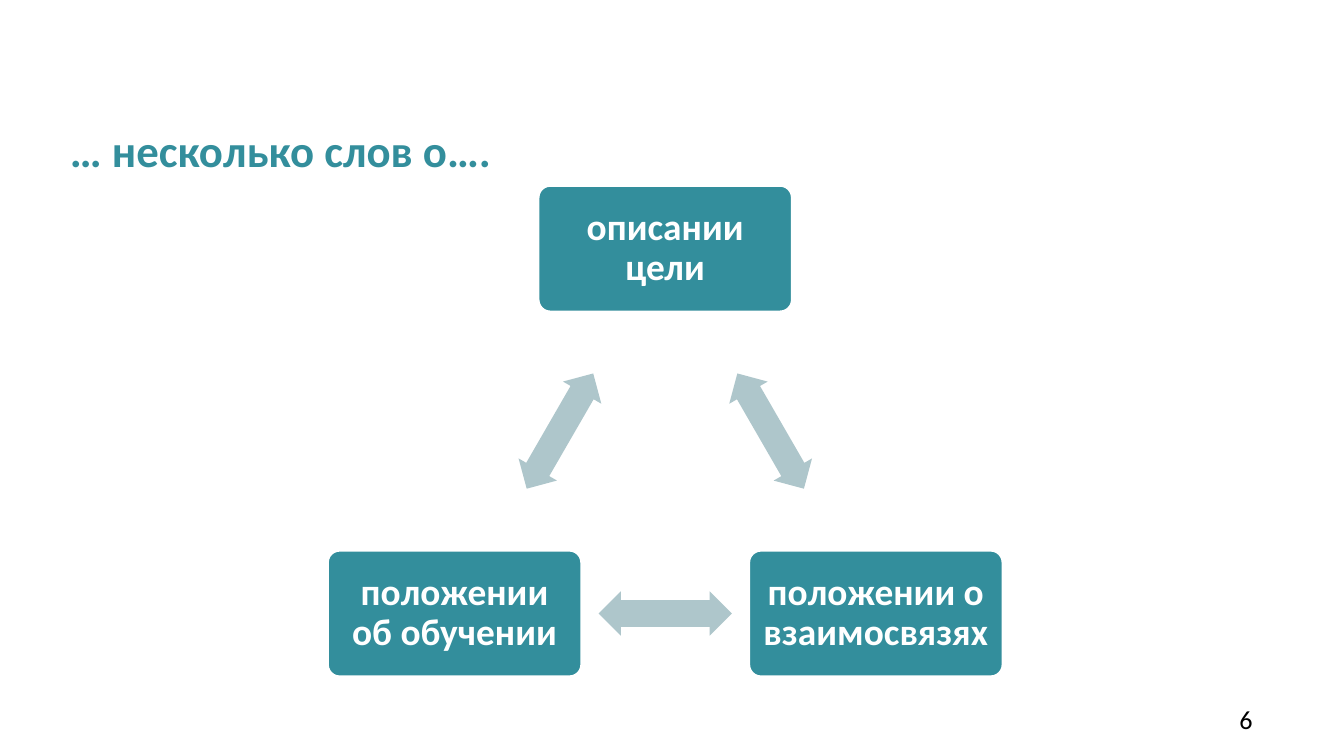
import math

import pptx
import pptx.dml.color
import pptx.enum.shapes
import pptx.enum.text
import pptx.util

Inches = pptx.util.Inches
Pt = pptx.util.Pt
RGBColor = pptx.dml.color.RGBColor
MSO_SHAPE = pptx.enum.shapes.MSO_SHAPE
MSO_ANCHOR = pptx.enum.text.MSO_ANCHOR
PP_ALIGN = pptx.enum.text.PP_ALIGN

TITLE = "… несколько слов о…."
TOPICS = ["описании цели", "положении о взаимосвязях", "положении об обучении"]
PAGE_NUMBER = "6"

TEAL = RGBColor(0x33, 0x8E, 0x9C)
PALE_TEAL = RGBColor(0xAE, 0xC6, 0xCB)
WHITE = RGBColor(0xFF, 0xFF, 0xFF)
BLACK = RGBColor(0, 0, 0)

SLIDE_WIDTH = Inches(10)
CYCLE_X, CYCLE_Y, RADIUS = 4.95, 3.66, 1.81
BOX_SIZE = (1.9, 0.95)
ARROW_SIZE = (0.99, 0.33)


def write(text_frame, text, size, color, bold, align, anchor, margin=0):
    text_frame.word_wrap = True
    text_frame.auto_size = pptx.enum.text.MSO_AUTO_SIZE.NONE
    text_frame.vertical_anchor = anchor
    text_frame.margin_left = text_frame.margin_right = Inches(margin)
    text_frame.margin_top = text_frame.margin_bottom = Inches(margin)
    text_frame.text = text
    paragraph = text_frame.paragraphs[0]
    paragraph.alignment = align
    paragraph.font.name = "Calibri"
    paragraph.font.size = Pt(size)
    paragraph.font.bold = bold
    paragraph.font.color.rgb = color
    return paragraph


def add_on_cycle(slide, kind, degrees, radius, size, fill):
    """Add a shape centred at an angle (clockwise from the top) on the cycle."""
    angle = math.radians(degrees)
    width, height = size
    left = CYCLE_X + radius * math.sin(angle) - width / 2
    top = CYCLE_Y - radius * math.cos(angle) - height / 2
    shape = slide.shapes.add_shape(
        kind, Inches(left), Inches(top), Inches(width), Inches(height))
    shape.shadow.inherit = False
    shape.fill.solid()
    shape.fill.fore_color.rgb = fill
    return shape


presentation = pptx.Presentation()
presentation.slide_width = SLIDE_WIDTH
presentation.slide_height = SLIDE_WIDTH * 9 // 16
slide = presentation.slides.add_slide(presentation.slide_layouts[5])

title = slide.shapes.title
title.left, title.top = Inches(0.52), Inches(0.9)
title.width, title.height = Inches(8.73), Inches(0.68)
paragraph = write(title.text_frame, TITLE, 24, TEAL, True,
                  PP_ALIGN.LEFT, MSO_ANCHOR.TOP)
paragraph.line_spacing = Pt(30)

step = 360 / len(TOPICS)
for index, topic in enumerate(TOPICS):
    box = add_on_cycle(slide, MSO_SHAPE.ROUNDED_RECTANGLE, index * step,
                       RADIUS, BOX_SIZE, TEAL)
    box.adjustments[0] = 0.1
    box.line.color.rgb = WHITE
    box.line.width = Pt(2.08)
    paragraph = write(box.text_frame, topic, 20, WHITE, True,
                      PP_ALIGN.CENTER, MSO_ANCHOR.MIDDLE, 0.05)
    paragraph.line_spacing = 0.9

    arrow = add_on_cycle(slide, MSO_SHAPE.LEFT_RIGHT_ARROW, (index + 0.5) * step,
                         RADIUS * math.cos(math.radians(step / 2)), ARROW_SIZE,
                         PALE_TEAL)
    arrow.adjustments[0] = 0.6
    arrow.adjustments[1] = 0.5
    arrow.rotation = (index + 0.5) * step
    arrow.line.fill.background()

page_number = slide.shapes.add_textbox(
    Inches(8.27), Inches(5.24), Inches(1.05), Inches(0.22))
write(page_number.text_frame, PAGE_NUMBER, 14, BLACK, False,
      PP_ALIGN.RIGHT, MSO_ANCHOR.MIDDLE)

presentation.save("out.pptx")
